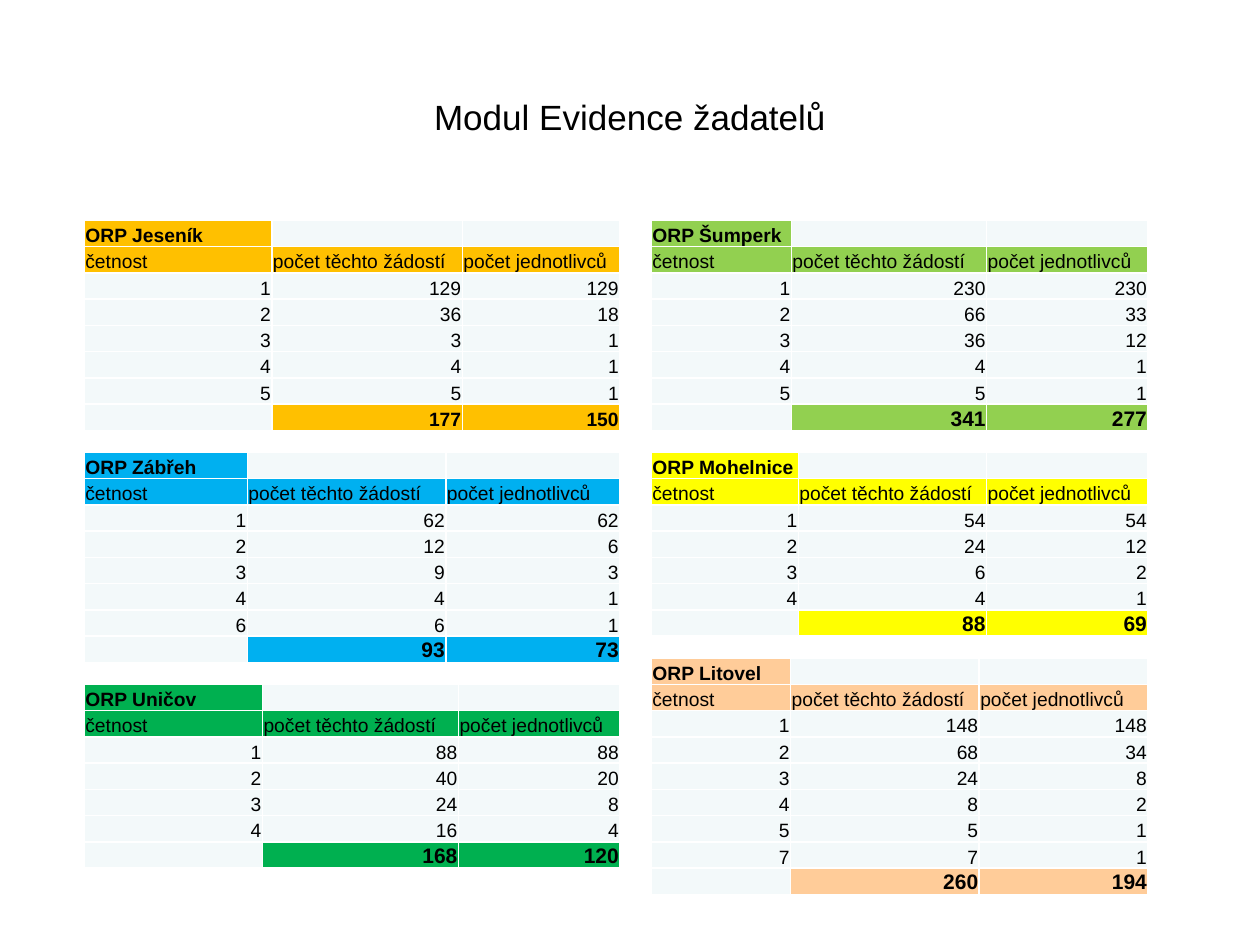
"""Build the slide of applicant counts with one table per district."""
import pptx
import pptx.dml.color
import pptx.enum.text
import pptx.oxml.ns
import pptx.util
from lxml import etree

Pt = pptx.util.Pt
ALIGN = pptx.enum.text.PP_ALIGN
ANCHOR = pptx.enum.text.MSO_ANCHOR
HUES = {
    "text": "000000", "pale": "F3F9FA", "gold": "FFC000", "lime": "92D050",
    "blue": "00B0F0", "yellow": "FFFF00", "green": "00B050", "peach": "FFCC99",
}
HEAD = ("četnost", "počet těchto žádostí", "počet jednotlivců")
ROW, GAP, TOP = 15.02, 12.4, 126


def write(para, text, size=11, bold=False, align=ALIGN.LEFT):
    para.alignment = align
    if not text:
        tag = pptx.oxml.ns.qn("a:endParaRPr")
        etree.SubElement(para._p, tag, sz=str(size * 100))
        return
    run = para.add_run()
    run.text = text
    run.font.name = "Arial"
    run.font.size = Pt(size)
    run.font.bold = bold
    run.font.color.rgb = pptx.dml.color.RGBColor.from_string(HUES["text"])


deck = pptx.Presentation()
deck.slide_width, deck.slide_height = Pt(720), Pt(540)
slide = deck.slides.add_slide(deck.slide_layouts[5])

title = slide.shapes.title
title.left, title.top, title.width, title.height = Pt(36), Pt(21.6), Pt(648), Pt(90)
title.text_frame.vertical_anchor = ANCHOR.MIDDLE
write(title.text_frame.paragraphs[0], "Modul Evidence žadatelů", size=20, align=ALIGN.CENTER)

stacks = [
    (48.2, [
        ("Jeseník", "gold", 11, (107.2, 108.8, 90),
         [(1, 129, 129), (2, 36, 18), (3, 3, 1), (4, 4, 1), (5, 5, 1)], (177, 150)),
        ("Zábřeh", "blue", 12, (93.2, 113.4, 99.4),
         [(1, 62, 62), (2, 12, 6), (3, 9, 3), (4, 4, 1), (6, 6, 1)], (93, 73)),
        ("Uničov", "green", 12, (101.8, 112, 92.2),
         [(1, 88, 88), (2, 40, 20), (3, 24, 8), (4, 16, 4)], (168, 120)),
    ]),
    (372.2, [
        ("Šumperk", "lime", 12, (80, 111.6, 92.2),
         [(1, 230, 230), (2, 66, 33), (3, 36, 12), (4, 4, 1), (5, 5, 1)], (341, 277)),
        ("Mohelnice", "yellow", 12, (84, 107.6, 92.2),
         [(1, 54, 54), (2, 24, 12), (3, 6, 2), (4, 4, 1)], (88, 69)),
        ("Litovel", "peach", 12, (79.6, 107.8, 96.4),
         [(1, 148, 148), (2, 68, 34), (3, 24, 8), (4, 8, 2), (5, 5, 1), (7, 7, 1)],
         (260, 194)),
    ]),
]

for left, group in stacks:
    top = TOP
    for name, hue, size, widths, counts, total in group:
        rows = [("ORP " + name, "", ""), HEAD, *counts, ("", *total)]
        last = len(rows) - 1
        high = ROW * len(rows)
        table = slide.shapes.add_table(
            len(rows), 3, Pt(left), Pt(top), Pt(sum(widths)), Pt(high)).table
        table.first_row = table.horz_banding = False
        for col, width in zip(table.columns, widths):
            col.width = Pt(width)
        for r, row in enumerate(rows):
            table.rows[r].height = Pt(ROW)
            for c, value in enumerate(row):
                cell = table.cell(r, c)
                cell.margin_left = cell.margin_right = cell.margin_top = Pt(0.6)
                cell.margin_bottom = 0
                cell.vertical_anchor = ANCHOR.BOTTOM
                strong = value != "" and r in (0, 1, last)
                cell.fill.solid()
                cell.fill.fore_color.rgb = pptx.dml.color.RGBColor.from_string(
                    HUES[hue if strong else "pale"])
                write(cell.text_frame.paragraphs[0], str(value),
                      size=size if r == last and value else 11,
                      bold=r in (0, last),
                      align=ALIGN.RIGHT if r > 1 else ALIGN.LEFT)
        top += high + GAP

deck.save("out.pptx")
